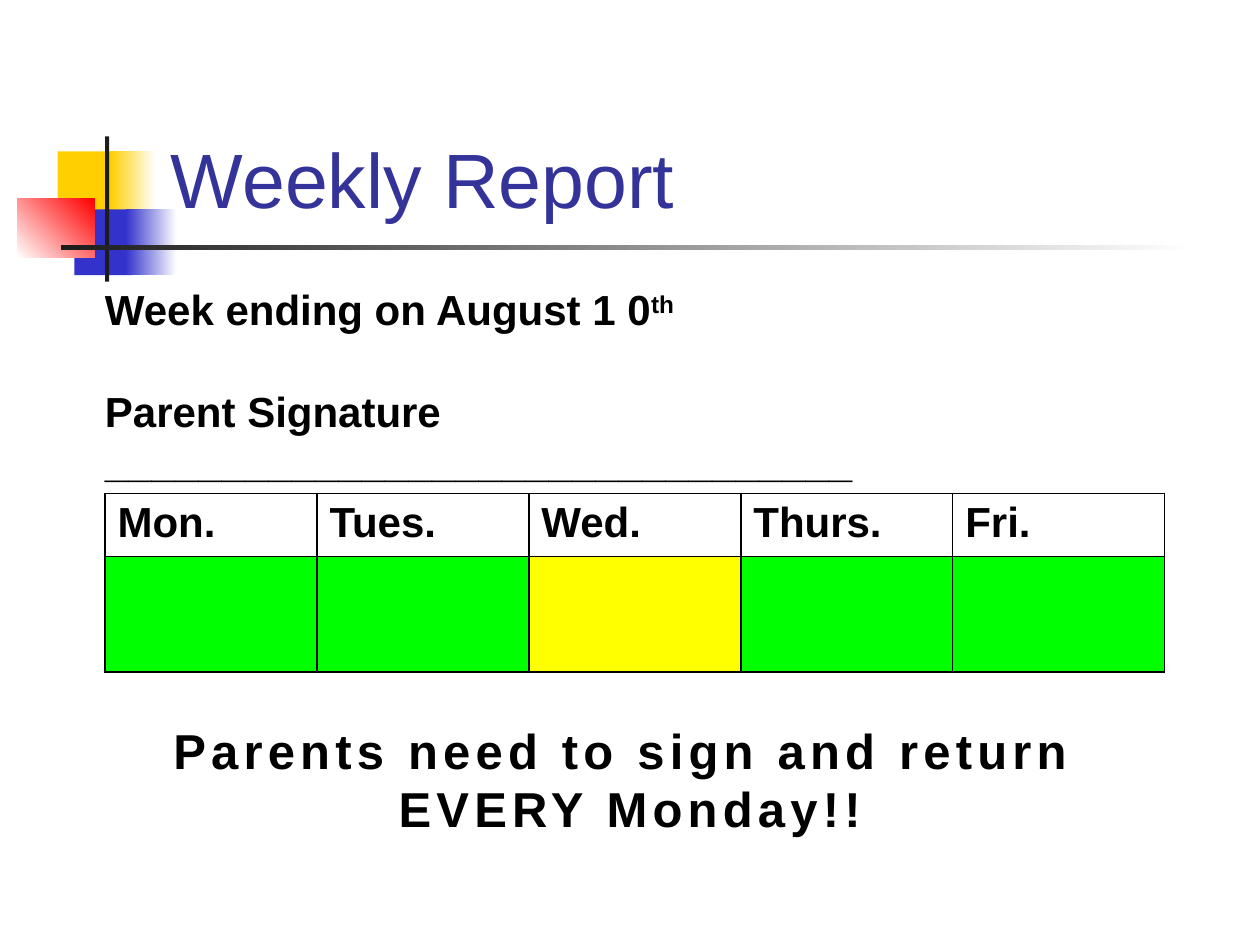
import pptx
import pptx.dml.color
import pptx.enum.shapes
import pptx.enum.text
import pptx.oxml
import pptx.oxml.ns
import pptx.util

Pt = pptx.util.Pt
RGBColor = pptx.dml.color.RGBColor
ALIGN = pptx.enum.text.PP_ALIGN
ANCHOR = pptx.enum.text.MSO_ANCHOR

BLACK = RGBColor(0x00, 0x00, 0x00)
WHITE = RGBColor(0xFF, 0xFF, 0xFF)
INK = RGBColor(0x1C, 0x1C, 0x1C)
GOLD = RGBColor(0xFF, 0xCF, 0x01)
BLUE = RGBColor(0x33, 0x33, 0xCC)
RED = RGBColor(0xFF, 0x00, 0x00)
NAVY = RGBColor(0x33, 0x33, 0x99)
GREEN = RGBColor(0x00, 0xFF, 0x00)
YELLOW = RGBColor(0xFF, 0xFF, 0x00)


def write(para, text, size=24, color=BLACK, bold=True, align=ALIGN.LEFT,
          gap=0, raised=False, track=0):
    """Add a run to a paragraph; gap is the space before, in points."""
    para.alignment = align
    para.space_before = Pt(gap)
    run = para.add_run()
    run.text = text
    font = run.font
    font.name, font.size, font.bold = "Arial", Pt(size), bold
    font.color.rgb = color
    props = run._r.get_or_add_rPr()
    if raised:
        props.set("baseline", "30000")
    if track:
        props.set("spc", str(track * 100))


class Page:
    def __init__(self, slide):
        self.slide = slide
        self.shapes = slide.shapes

    def title(self, text, box):
        shape = self.shapes.title
        shape.left, shape.top, shape.width, shape.height = map(Pt, box)
        shape.text_frame.vertical_anchor = ANCHOR.BOTTOM
        write(shape.text_frame.paragraphs[0], text, size=44, color=NAVY, bold=False)

    def block(self, box, start, end=None, angle=0):
        """Draw a plain rectangle, or one that fades from start to end."""
        kind = pptx.enum.shapes.MSO_SHAPE.RECTANGLE
        shape = self.shapes.add_shape(kind, *map(Pt, box))
        shape.shadow.inherit = False
        shape.line.fill.background()
        if end is None:
            shape.fill.solid()
            shape.fill.fore_color.rgb = start
            return
        shape.fill.gradient()
        shape.fill.gradient_angle = angle
        for stop, color in zip(shape.fill.gradient_stops, (start, end)):
            stop.color.rgb = color

    def text(self, box, anchor=ANCHOR.TOP, inset=None):
        frame = self.shapes.add_textbox(*map(Pt, box)).text_frame
        frame.word_wrap = True
        frame.vertical_anchor = anchor
        if inset is not None:
            frame.margin_left = frame.margin_right = Pt(inset)
            frame.margin_top = frame.margin_bottom = Pt(inset)
        return frame

    def edge(self, cell):
        """Give a cell a thin black border on all sides."""
        props = cell._tc.get_or_add_tcPr()
        for spot, side in enumerate(("lnL", "lnR", "lnT", "lnB")):
            line = pptx.oxml.parse_xml(
                f'<a:{side} {pptx.oxml.ns.nsdecls("a")} w="12700"><a:solidFill>'
                f'<a:srgbClr val="{BLACK}"/></a:solidFill></a:{side}>')
            props.insert(spot, line)

    def table(self, box, days, marks, heights):
        table = self.shapes.add_table(2, len(days), *map(Pt, box)).table
        table.first_row = table.horz_banding = False
        for row, height in zip(table.rows, heights):
            row.height = Pt(height)
        for col, (day, mark) in enumerate(zip(days, marks)):
            table.columns[col].width = Pt(box[2] / len(days))
            head, body = table.cell(0, col), table.cell(1, col)
            write(head.text_frame.paragraphs[0], day)
            head.fill.background()
            body.fill.solid()
            body.fill.fore_color.rgb = mark
            self.edge(head)
            self.edge(body)


def main():
    deck = pptx.Presentation()
    deck.slide_width, deck.slide_height = Pt(720), Pt(540)
    page = Page(deck.slides.add_slide(deck.slide_layouts[5]))

    # Corner ornament and rule
    page.block((33, 86.5, 34.5, 37.5), GOLD)
    page.block((63, 86.5, 26, 37.5), GOLD, WHITE)
    page.block((42.5, 119.7, 33, 37.5), BLUE)
    page.block((72, 119.7, 29, 37.5), BLUE, WHITE)
    page.block((10, 113.7, 44, 33.5), WHITE, RED, angle=45)
    page.block((60, 78, 2.4, 83), INK)
    page.block((34.6, 140.2, 648, 2.5), INK, WHITE)

    page.title("Weekly Report", (90.5, 16.5, 613.5, 115))

    # Date and signature
    frame = page.text((60, 176.4, 606, 87), ANCHOR.MIDDLE, inset=0)
    date = frame.paragraphs[0]
    write(date, "Week ending on August 1 0")
    write(date, "th", raised=True)
    write(frame.add_paragraph(), "Parent Signature " + "_" * 32, gap=29)

    # Week table
    page.table((60, 282, 605.5, 102),
               ("Mon.", "Tues.", "Wed.", "Thurs.", "Fri."),
               (GREEN, GREEN, YELLOW, GREEN, GREEN), (36, 66))

    # Reminder
    frame = page.text((66, 408, 588, 75))
    style = dict(size=28, align=ALIGN.CENTER, track=3)
    write(frame.paragraphs[0], "Parents need to sign and return ", **style)
    write(frame.add_paragraph(), "EVERY Monday!!", **style)

    deck.save("out.pptx")


if __name__ == "__main__":
    main()
